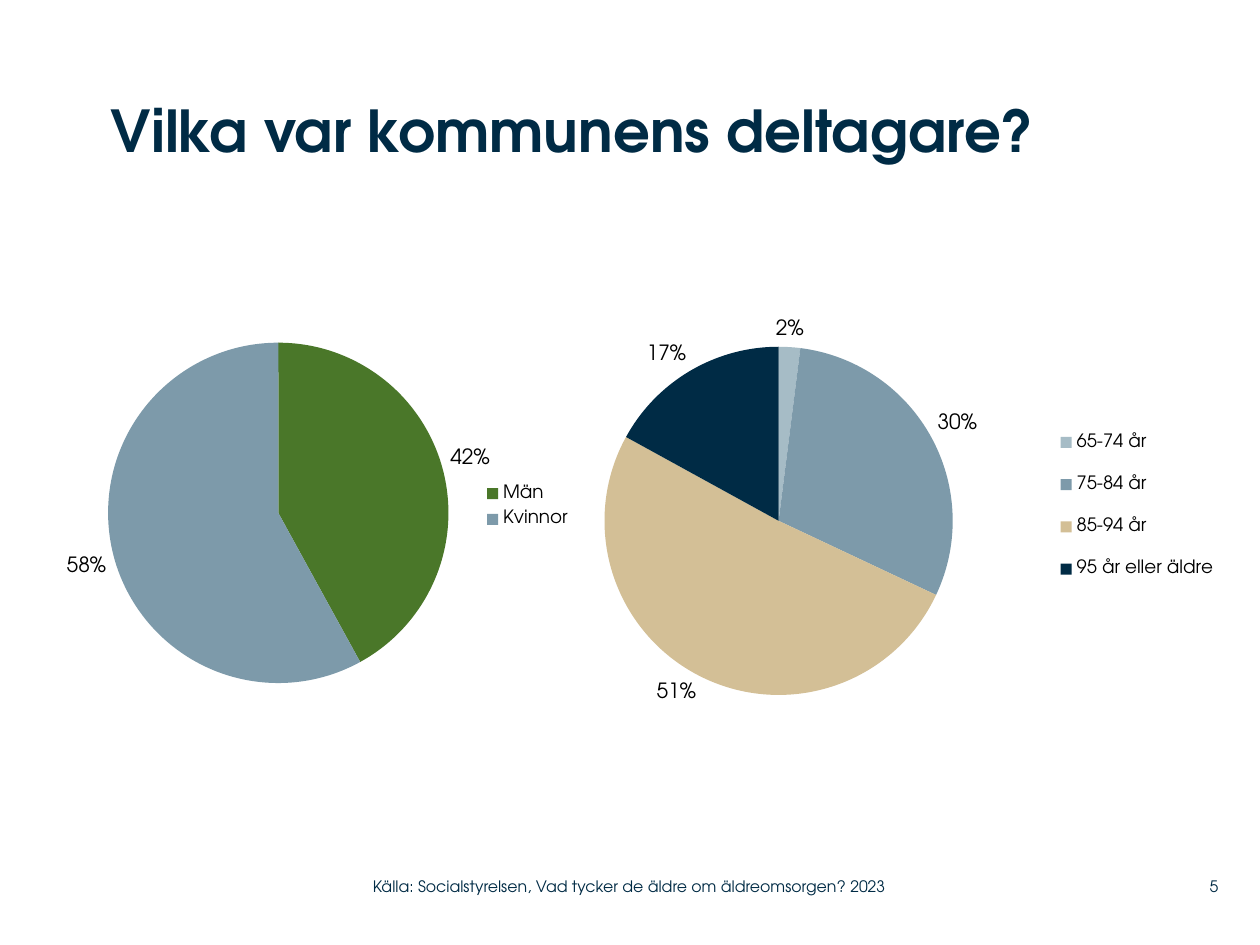
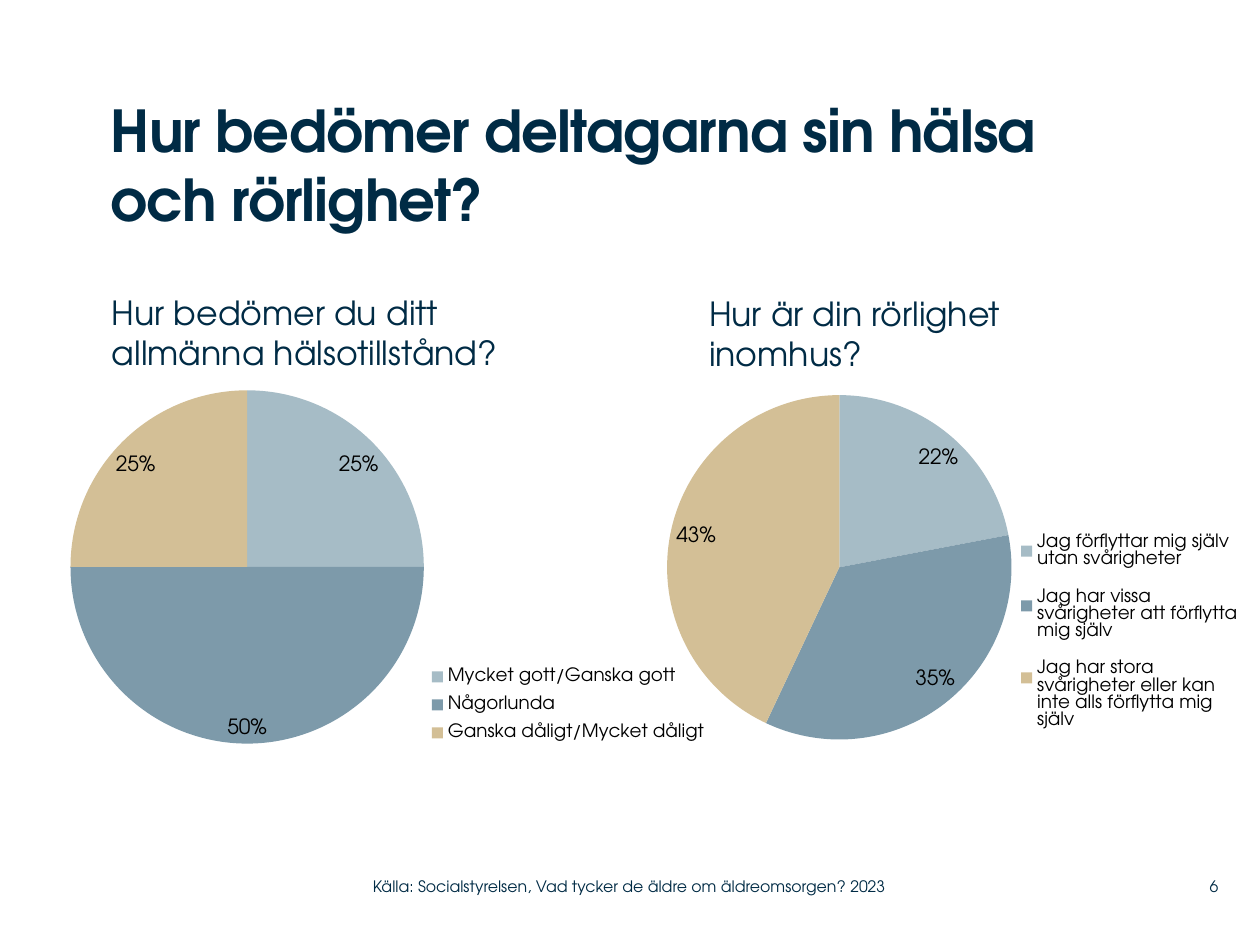
from dataclasses import dataclass, field
from typing import Any, NamedTuple

from lxml import etree
from pptx import Presentation
from pptx.chart import data as cd
from pptx.dml import color
from pptx.enum import chart as ce
from pptx.enum import text
from pptx.oxml import ns
from pptx.util import Inches, Pt

WIDE, HIGH = 10, 7.5
COLS, ROWS = 100, 75


@dataclass(frozen=True)
class Theme:
    font: str = "TeX Gyre Adventor"
    navy: str = "002B45"
    steel: str = "7D9AAA"
    mist: str = "A6BCC6"
    sand: str = "D3BF96"
    green: str = "4A7729"
    black: str = "000000"
    title: float = 33
    head: float = 19
    label: float = 12
    key: float = 10.5
    base: float = 10
    foot: float = 9


THEME = Theme()
AGES = (THEME.mist, THEME.steel, THEME.sand, THEME.navy)


class Box(NamedTuple):
    left: float
    top: float
    width: float
    height: float

    def place(self) -> tuple[int, ...]:
        return (Inches(self.left * WIDE / COLS), Inches(self.top * HIGH / ROWS),
                Inches(self.width * WIDE / COLS), Inches(self.height * HIGH / ROWS))


@dataclass(frozen=True)
class Note:
    words: str
    box: Box
    size: float
    bold: bool = False
    tight: int = 0
    inset: bool = False
    anchor: Any = text.MSO_ANCHOR.TOP
    align: Any = text.PP_ALIGN.LEFT


@dataclass(frozen=True)
class Pie:
    box: Box
    shares: dict[str, int]
    plot: Box
    key: Box
    hues: tuple[str, ...] = AGES
    spot: Any = ce.XL_LABEL_POSITION.OUTSIDE_END


@dataclass(frozen=True)
class Page:
    number: int
    title: Note
    pies: list[Pie]
    heads: list[Note] = field(default_factory=list)


def assign(item: Any, values: dict[str, Any]) -> None:
    for name, value in values.items():
        setattr(item, name, value)


def style(font: Any, size: float, hue: str, bold: bool = False) -> None:
    assign(font, {"name": THEME.font, "size": Pt(size), "bold": bold})
    font.color.rgb = color.RGBColor.from_string(hue)


def write(slide: Any, note: Note) -> None:
    frame = slide.shapes.add_textbox(*note.box.place()).text_frame
    assign(frame, {"word_wrap": True, "vertical_anchor": note.anchor})
    if not note.inset:
        assign(frame, {f"margin_{side}": 0 for side in ("left", "top", "right", "bottom")})
    line = frame.paragraphs[0]
    line.alignment = note.align
    run = line.add_run()
    run.text = note.words
    style(run.font, note.size, THEME.navy, note.bold)
    if note.tight:
        run.font._element.set("spc", str(note.tight))


def arrange(parent: Any, index: int, area: Box, inner: bool = False) -> None:
    for old in parent.findall(ns.qn("c:layout")):
        parent.remove(old)
    layout = etree.Element(ns.qn("c:layout"))
    manual = etree.SubElement(layout, ns.qn("c:manualLayout"))
    rules = {"layoutTarget": "inner"} if inner else {}
    rules |= {"xMode": "edge", "yMode": "edge"}
    rules |= dict(zip("xywh", map(str, area)))
    for tag, value in rules.items():
        etree.SubElement(manual, ns.qn(f"c:{tag}")).set("val", value)
    parent.insert(index, layout)


def draw(slide: Any, pie: Pie) -> None:
    data = cd.CategoryChartData()
    data.categories = list(pie.shares)
    data.add_series("Series 1", list(pie.shares.values()))
    chart = slide.shapes.add_chart(ce.XL_CHART_TYPE.PIE, *pie.box.place(), data).chart
    assign(chart, {"has_title": False, "has_legend": True})
    style(chart.font, THEME.base, THEME.black)
    assign(chart.legend, {"position": ce.XL_LEGEND_POSITION.RIGHT, "include_in_layout": False})
    style(chart.legend.font, THEME.key, THEME.black)
    plot = chart.plots[0]
    assign(plot, {"vary_by_categories": True, "has_data_labels": True})
    assign(plot.data_labels, {"show_percentage": True, "show_value": False,
                              "number_format": "0%", "number_format_is_linked": False,
                              "position": pie.spot})
    style(plot.data_labels.font, THEME.label, THEME.black)
    for index, hue in zip(range(len(pie.shares)), pie.hues):
        form = plot.series[0].points[index].format
        form.fill.solid()
        form.fill.fore_color.rgb = color.RGBColor.from_string(hue)
        form.line.fill.background()
    arrange(chart._chartSpace.chart.plotArea, 0, pie.plot, True)
    arrange(chart.legend._element, 1, pie.key)


def build(deck: Any, page: Page) -> None:
    slide = deck.slides.add_slide(deck.slide_layouts[6])
    middle = text.MSO_ANCHOR.MIDDLE
    source = Note("Källa: Socialstyrelsen, Vad tycker de äldre om äldreomsorgen? 2023",
                  Box(29.6, 68.9, 44.3, 2.9), THEME.foot, anchor=middle)
    number = Note(str(page.number), Box(92, 68.9, 4.7, 2.9), THEME.foot,
                  anchor=middle, align=text.PP_ALIGN.RIGHT)
    for note in (page.title, *page.heads):
        write(slide, note)
    for pie in page.pies:
        draw(slide, pie)
    for note in (source, number):
        write(slide, note)


BEST = ce.XL_LABEL_POSITION.BEST_FIT
PAGES = [
    Page(5, Note("Vilka var kommunens deltagare?", Box(8.8, 7.5, 76, 14.2), THEME.title, True), [
        Pie(Box(-2.3, 23.1, 54.2, 34.2), {"Män": 42, "Kvinnor": 58},
            Box(0.2, 0.12, 0.5, 0.79), Box(0.73, 0.43, 0.17, 0.14),
            (THEME.green, THEME.steel)),
        Pie(Box(43.1, 23.9, 54.2, 34.2),
            {"65-74 år": 2, "75-84 år": 30, "85-94 år": 51, "95 år eller äldre": 17},
            Box(0.09, 0.1, 0.51, 0.82), Box(0.74, 0.25, 0.26, 0.45)),
    ]),
    Page(6, Note("Hur bedömer deltagarna sin hälsa och rörlighet?",
                 Box(8.8, 7.5, 82.7, 11.2), THEME.title, True, -50), [
        Pie(Box(3.9, 27.9, 54.2, 34.2),
            {"Mycket gott/Ganska gott": 25, "Någorlunda": 50, "Ganska dåligt/Mycket dåligt": 25},
            Box(0.03, 0.09, 0.52, 0.82), Box(0.54, 0.71, 0.44, 0.22), spot=BEST),
        Pie(Box(49, 28.1, 54.2, 40.8),
            {"Jag förflyttar mig själv utan svårigheter": 22,
             "Jag har vissa svårigheter att förflytta mig själv": 35,
             "Jag har stora svårigheter eller kan inte alls förflytta mig själv": 43},
            Box(0.07, 0.08, 0.51, 0.67), Box(0.59, 0.31, 0.32, 0.46), spot=BEST),
    ], [
        Note("Hur bedömer du ditt allmänna hälsotillstånd?",
             Box(7.9, 22.7, 40.7, 7.4), THEME.head, inset=True),
        Note("Hur är din rörlighet inomhus?",
             Box(55.3, 22.8, 37.1, 7.4), THEME.head, inset=True),
    ]),
]


def main() -> None:
    deck = Presentation()
    assign(deck, {"slide_width": Inches(WIDE), "slide_height": Inches(HIGH)})
    for page in PAGES:
        build(deck, page)
    deck.save("out.pptx")


if __name__ == "__main__":
    main()
